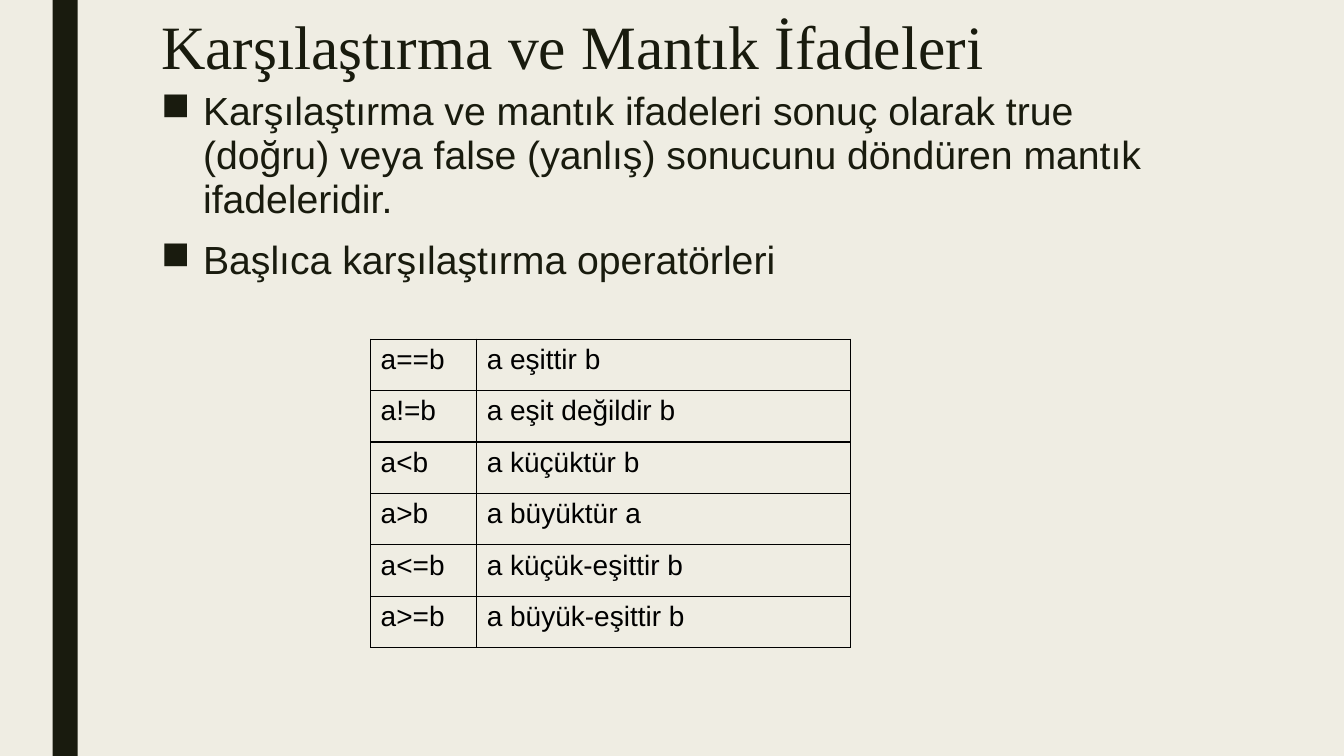
from lxml import etree
from pptx import Presentation
from pptx.dml.color import RGBColor
from pptx.enum.shapes import MSO_SHAPE
from pptx.oxml.ns import qn
from pptx.util import Pt

RECT = MSO_SHAPE.RECTANGLE
PX = 9525
THEME = {
    "back": RGBColor.from_string("EFEDE3"),
    "dark": RGBColor.from_string("191B0E"),
    "black": RGBColor.from_string("000000"),
    "head": "Times New Roman",
    "body": "Arial",
    "big": 44,
    "mid": 28,
    "small": 20,
}


def style(para, text, face, size, color):
    para.text = text
    para.font.name = THEME[face]
    para.font.size = Pt(THEME[size])
    para.font.color.rgb = THEME[color]


def add_box(left, top, width, height):
    box = slide.shapes.add_textbox(left * PX, top * PX, width * PX, height * PX)
    box.text_frame.word_wrap = True
    return box.text_frame


deck = Presentation()
deck.slide_width = 1280 * PX
deck.slide_height = 720 * PX
slide = deck.slides.add_slide(deck.slide_layouts[6])
slide.background.fill.solid()
slide.background.fill.fore_color.rgb = THEME["back"]

bar = slide.shapes.add_shape(RECT, 50 * PX, 0, 24 * PX, 720 * PX)
bar.shadow.inherit = False
bar.fill.solid()
bar.fill.fore_color.rgb = THEME["dark"]
bar.line.fill.background()

title = add_box(144, 11, 1008, 156).paragraphs[0]
style(title, "Karşılaştırma ve Mantık İfadeleri", "head", "big", "dark")
title.line_spacing = 0.89

points = [
    "Karşılaştırma ve mantık ifadeleri sonuç olarak true (doğru) veya false "
    "(yanlış) sonucunu döndüren mantık ifadeleridir.",
    "Başlıca karşılaştırma operatörleri",
]
body = add_box(144, 81, 1008, 536)
for i, point in enumerate(points):
    para = body.add_paragraph() if i else body.paragraphs[0]
    style(para, point, "body", "mid", "dark")
    para.line_spacing = 0.94
    para.space_before = Pt(10)
    para.space_after = Pt(2)
    props = para._p.get_or_add_pPr()
    props.set("marL", str(40 * PX))
    props.set("indent", str(-40 * PX))
    bullet = etree.Element(qn("a:buChar"), char="■")
    props.find(qn("a:defRPr")).addprevious(bullet)

rules = [
    ("a==b", "a eşittir b"),
    ("a!=b", "a eşit değildir b"),
    ("a<b", "a küçüktür b"),
    ("a>b", "a büyüktür a"),
    ("a<=b", "a küçük-eşittir b"),
    ("a>=b", "a büyük-eşittir b"),
]
widths = [101, 356]
row = 49
frame = slide.shapes.add_table(
    len(rules), len(widths), 353 * PX, 323 * PX, sum(widths) * PX, len(rules) * row * PX
)
table = frame.table
table.first_row = False
table.horz_banding = False
for column, width in zip(table.columns, widths):
    column.width = width * PX
for r, pair in enumerate(rules):
    table.rows[r].height = row * PX
    for c, text in enumerate(pair):
        cell = table.cell(r, c)
        style(cell.text_frame.paragraphs[0], text, "body", "small", "black")
        props = cell._tc.get_or_add_tcPr()
        for side in ("lnL", "lnR", "lnT", "lnB"):
            edge = etree.SubElement(props, qn("a:" + side), w=str(Pt(1)))
            fill = etree.SubElement(edge, qn("a:solidFill"))
            etree.SubElement(fill, qn("a:srgbClr"), val=str(THEME["black"]))
        cell.fill.background()

deck.save("out.pptx")
